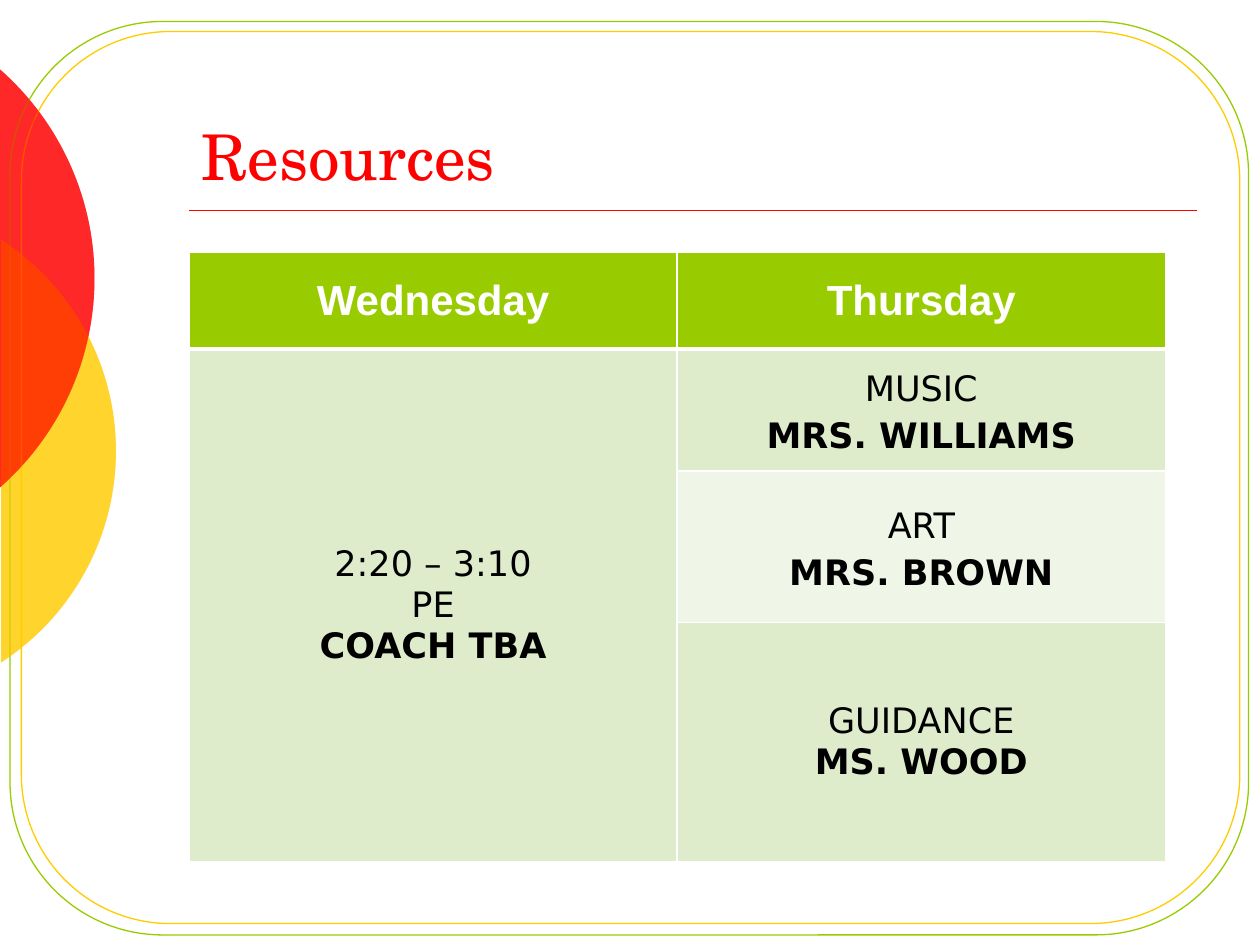
import dataclasses
import math
from typing import Any

import lxml.etree
import pptx
import pptx.dml.color
import pptx.enum.shapes
import pptx.enum.text
import pptx.oxml.ns
import pptx.util

Inches = pptx.util.Inches
Pt = pptx.util.Pt
qn = pptx.oxml.ns.qn

RED, YELLOW, GREEN, WHITE, BLACK = "FF0000", "FFCC00", "99CC00", "FFFFFF", "000000"
PALE, PALER = "DEECCC", "EFF6E7"


@dataclasses.dataclass(frozen=True)
class Disc:
    left: float
    top: float
    radius: float
    cut: float
    color: str
    opacity: int


@dataclasses.dataclass(frozen=True)
class Frame:
    left: float
    top: float
    width: float
    height: float
    color: str


@dataclasses.dataclass(frozen=True)
class Entry:
    row: int
    column: int
    lines: tuple[str, ...]
    spacing: float = 1.0
    inset: tuple[float, float] = (0.1, 0.05)


DISCS = (
    Disc(-3.08, 1.58, 2, 0.01, YELLOW, 58),
    Disc(-3.67, 0, 2.21, -0.01, RED, 60),
)
FRAMES = (
    Frame(0.08, 0.17, 9.83, 7.25, GREEN),
    Frame(0.17, 0.25, 9.67, 7.08, YELLOW),
)
DAYS = ("Wednesday", "Thursday")
ROW_HEIGHTS = (0.77, 0.97, 1.2, 1.9)
ROW_FILLS = (GREEN, PALE, PALER, PALE)
ENTRIES = (
    Entry(1, 0, ("2:20 – 3:10", "PE", "COACH TBA")),
    Entry(1, 1, ("MUSIC", "MRS. WILLIAMS"), 1.15, (0.07, 0)),
    Entry(2, 1, ("ART", "MRS. BROWN"), 1.15, (0.07, 0)),
    Entry(3, 1, ("GUIDANCE", "MS. WOOD")),
)
DAY_FONT = {"name": "Arial", "size": Pt(24), "bold": True}
ENTRY_FONT = {"name": "DejaVu Sans", "size": Pt(20), "bold": False}
TITLE_FONT = {"name": "TeX Gyre Schola", "size": Pt(36), "bold": False}


def rgb(code: str) -> pptx.dml.color.RGBColor:
    """Turn a hex string into a colour."""
    return pptx.dml.color.RGBColor.from_string(code)


def apply(target: Any, values: dict[str, Any]) -> None:
    """Set every named attribute on the target."""
    for name, value in values.items():
        setattr(target, name, value)


def write(paragraph: Any, text: str, font: dict[str, Any], color: str) -> None:
    """Add one formatted run to a paragraph."""
    run = paragraph.add_run()
    run.text = text
    apply(run.font, font)
    run.font.color.rgb = rgb(color)


def add_step(outline: Any, command: str, *points: tuple[float, float]) -> None:
    """Append a drawing command with its points to an outline."""
    step = lxml.etree.SubElement(outline, qn(f"a:{command}"))
    for x, y in points:
        lxml.etree.SubElement(step, qn("a:pt"), x=str(int(Inches(x))), y=str(int(Inches(y))))


def draw_disc(shapes: Any, disc: Disc) -> None:
    """Draw the part of a translucent disc right of its cut, as two curves."""
    radius = disc.radius
    bounds = shapes.build_freeform(Inches(disc.left), Inches(disc.top))
    corner = (Inches(disc.left + 2 * radius), Inches(disc.top + 2 * radius))
    bounds.add_line_segments([corner], close=True)
    segment = bounds.convert_to_shape()

    chord = disc.cut - disc.left
    reach = math.acos((chord - radius) / radius)
    handle = 4 / 3 * math.tan(reach / 4) * radius
    rise = radius * math.sin(reach)
    lean_x, lean_y = handle * math.sin(reach), handle * math.cos(reach)
    upper, lower = (chord, radius - rise), (chord, radius + rise)
    tip = 2 * radius
    outline = segment.element.spPr.find(f".//{qn('a:path')}")
    for step in list(outline):
        outline.remove(step)
    add_step(outline, "moveTo", upper)
    add_step(outline, "cubicBezTo", (chord + lean_x, upper[1] + lean_y),
             (tip, radius - handle), (tip, radius))
    add_step(outline, "cubicBezTo", (tip, radius + handle),
             (chord + lean_x, lower[1] - lean_y), lower)
    add_step(outline, "lnTo", upper)
    add_step(outline, "close")

    segment.shadow.inherit = False
    segment.fill.solid()
    segment.fill.fore_color.rgb = rgb(disc.color)
    segment.line.fill.background()
    tint = segment.element.spPr.find(f".//{qn('a:srgbClr')}")
    lxml.etree.SubElement(tint, qn("a:alpha"), val=str(disc.opacity * 1000))


def draw_frame(shapes: Any, frame: Frame) -> None:
    """Draw an unfilled rounded border."""
    border = shapes.add_shape(
        pptx.enum.shapes.MSO_SHAPE.ROUNDED_RECTANGLE,
        Inches(frame.left), Inches(frame.top), Inches(frame.width), Inches(frame.height),
    )
    border.adjustments[0] = 0.167
    border.shadow.inherit = False
    border.fill.background()
    border.line.color.rgb = rgb(frame.color)
    border.line.width = Pt(0.75)


def draw_heading(shapes: Any) -> None:
    """Draw the title text."""
    heading = shapes.add_textbox(Inches(1.5), Inches(0.33), Inches(8), Inches(1.25))
    anchor = pptx.enum.text.MSO_ANCHOR.BOTTOM
    apply(heading.text_frame, {"word_wrap": True, "vertical_anchor": anchor})
    write(heading.text_frame.paragraphs[0], "Resources", TITLE_FONT, RED)


def draw_rule(shapes: Any) -> None:
    """Draw the line below the title."""
    rule = shapes.add_connector(
        pptx.enum.shapes.MSO_CONNECTOR.STRAIGHT,
        Inches(1.5), Inches(1.67), Inches(9.5), Inches(1.67),
    )
    rule.line.color.rgb = rgb(RED)
    rule.line.width = Pt(1)
    lxml.etree.SubElement(rule.element.spPr, qn("a:effectLst"))


def style_cell(cell: Any, row: int) -> None:
    """Give a cell its fill, anchor and white borders."""
    cell.vertical_anchor = pptx.enum.text.MSO_ANCHOR.MIDDLE
    cell.fill.solid()
    cell.fill.fore_color.rgb = rgb(ROW_FILLS[row])
    thick_side = {0: "lnB", 1: "lnT"}.get(row)
    properties = cell._tc.get_or_add_tcPr()
    for index, side in enumerate(("lnL", "lnR", "lnT", "lnB")):
        width = Pt(3 if side == thick_side else 1)
        edge = lxml.etree.Element(qn(f"a:{side}"), w=str(int(width)))
        paint = lxml.etree.SubElement(edge, qn("a:solidFill"))
        lxml.etree.SubElement(paint, qn("a:srgbClr"), val=WHITE)
        properties.insert(index, edge)


def fill_entry(cell: Any, entry: Entry) -> None:
    """Write an entry with its last line, the teacher, in bold."""
    side, end = map(Inches, entry.inset)
    apply(cell, {"margin_left": side, "margin_right": side, "margin_top": end, "margin_bottom": end})
    frame = cell.text_frame
    center = pptx.enum.text.PP_ALIGN.CENTER
    for index, line in enumerate(entry.lines):
        paragraph = frame.add_paragraph() if index else frame.paragraphs[0]
        apply(paragraph, {"alignment": center, "line_spacing": entry.spacing})
        is_teacher = index == len(entry.lines) - 1
        write(paragraph, line, ENTRY_FONT | {"bold": is_teacher}, BLACK)


def draw_schedule(shapes: Any) -> None:
    """Draw the table of days and lessons."""
    schedule = shapes.add_table(
        len(ROW_HEIGHTS), len(DAYS),
        Inches(1.5), Inches(2), Inches(7.75), Inches(sum(ROW_HEIGHTS)),
    ).table
    for row, height in enumerate(ROW_HEIGHTS):
        schedule.rows[row].height = Inches(height)
        for column in range(len(DAYS)):
            style_cell(schedule.cell(row, column), row)
    schedule.cell(1, 0).merge(schedule.cell(3, 0))
    for column, day in enumerate(DAYS):
        label = schedule.cell(0, column).text_frame.paragraphs[0]
        label.alignment = pptx.enum.text.PP_ALIGN.CENTER
        write(label, day, DAY_FONT, WHITE)
    for entry in ENTRIES:
        fill_entry(schedule.cell(entry.row, entry.column), entry)


def draw_discs(shapes: Any) -> None:
    """Draw one layer of the overlapping discs."""
    for disc in DISCS:
        draw_disc(shapes, disc)


def main() -> None:
    """Build and save the slide."""
    deck = pptx.Presentation()
    apply(deck, {"slide_width": Inches(10), "slide_height": Inches(7.5)})
    shapes = deck.slides.add_slide(deck.slide_layouts[6]).shapes
    draw_discs(shapes)
    for frame in FRAMES:
        draw_frame(shapes, frame)
    draw_rule(shapes)
    draw_discs(shapes)
    draw_heading(shapes)
    draw_schedule(shapes)
    deck.save("out.pptx")


if __name__ == "__main__":
    main()
